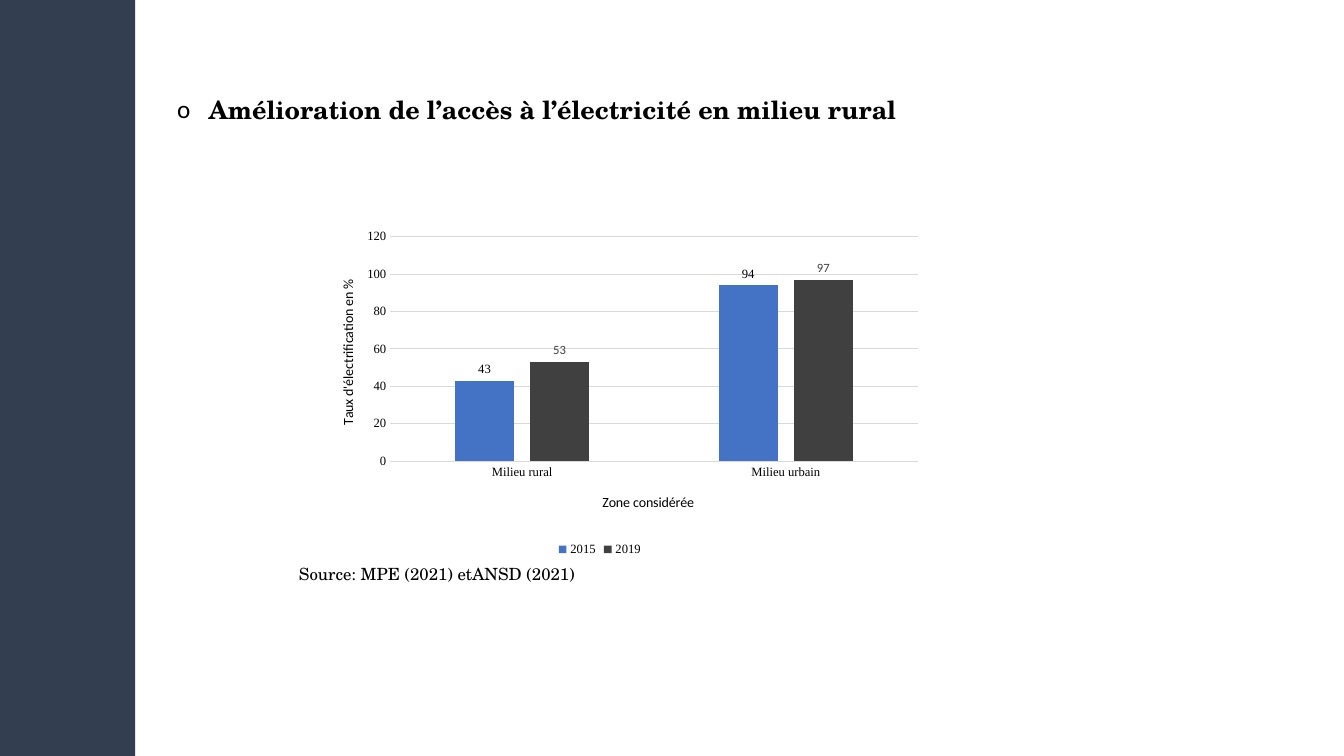
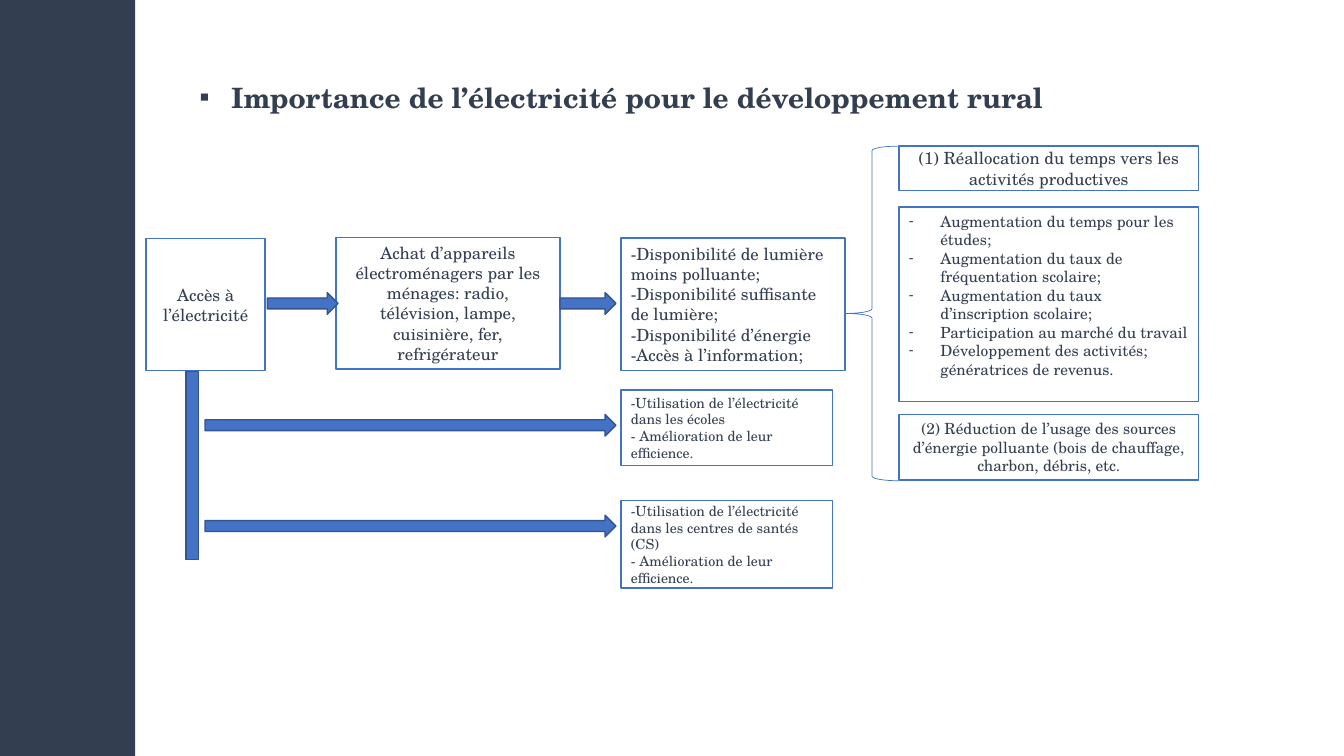
from lxml.etree import SubElement
from pptx import Presentation
from pptx.chart.data import CategoryChartData
from pptx.dml.color import RGBColor
from pptx.enum.chart import (XL_CHART_TYPE, XL_LABEL_POSITION,
                             XL_LEGEND_POSITION, XL_TICK_MARK)
from pptx.enum.shapes import MSO_SHAPE
from pptx.enum.text import MSO_ANCHOR, PP_ALIGN
from pptx.oxml.ns import qn
from pptx.util import Pt

# Shared look
NAVY = RGBColor(0x33, 0x3F, 0x50)
BLUE = RGBColor(0x44, 0x72, 0xC4)
EDGE = RGBColor(0x32, 0x54, 0x91)
DARK = RGBColor(0x40, 0x40, 0x40)
GREY = RGBColor(0xD9, 0xD9, 0xD9)
BLACK = RGBColor(0, 0, 0)
WHITE = RGBColor(255, 255, 255)
SERIF, SANS, TIMES = "TeX Gyre Schola", "Calibri", "Times New Roman"
WIDE, HIGH = 960, 540
INDENT = 22.5


def style(obj, form):
    for name, value in form.items():
        setattr(obj, name, value)


def ink(font, size, color, face=SERIF, bold=False):
    style(font, {"size": Pt(size), "name": face, "bold": bold})
    font.color.rgb = color


def stroke(line, color, width):
    line.color.rgb = color
    line.width = Pt(width)


def bullet(para, mark):
    props = para._p.get_or_add_pPr()
    props.set("marL", str(Pt(INDENT)))
    props.set("indent", str(-Pt(INDENT)))
    SubElement(props, qn("a:buFont")).set("typeface", SANS)
    SubElement(props, qn("a:buChar")).set("char", mark)


def write(frame, lines, size, color, align=PP_ALIGN.LEFT, mark=None, bold=False):
    frame.word_wrap = True
    for i, line in enumerate(lines):
        para = frame.paragraphs[0] if i == 0 else frame.add_paragraph()
        para.alignment = align
        if mark:
            bullet(para, mark)
        run = para.add_run()
        run.text = line
        ink(run.font, size, color, bold=bold)


def label(slide, spot, line, size, color, **form):
    box = slide.shapes.add_textbox(*map(Pt, spot))
    write(box.text_frame, [line], size, color, **form)


def block(slide, kind, spot, fill=None, edge=None, width=1):
    shape = slide.shapes.add_shape(kind, *map(Pt, spot))
    shape.shadow.inherit = False
    if fill is None:
        shape.fill.background()
    else:
        shape.fill.solid()
        shape.fill.fore_color.rgb = fill
    if edge is None:
        shape.line.fill.background()
    else:
        stroke(shape.line, edge, width)
    return shape


def card(slide, spot, lines, size, foot=3.6, **form):
    frame = block(slide, MSO_SHAPE.RECTANGLE, spot, WHITE, BLUE).text_frame
    style(frame, {"vertical_anchor": MSO_ANCHOR.MIDDLE, "margin_bottom": Pt(foot)})
    write(frame, lines, size, NAVY, **form)


def page(deck, title, spot, size, color, mark):
    slide = deck.slides.add_slide(deck.slide_layouts[6])
    block(slide, MSO_SHAPE.RECTANGLE, (0, 0, 96.5, HIGH), NAVY)
    label(slide, spot, title, size, color, mark=mark, bold=True)
    return slide


def place(part, index, form):
    """Give a chart part a manual layout."""
    for old in part.findall(qn("c:layout")):
        part.remove(old)
    layout = SubElement(part, qn("c:layout"))
    part.insert(index, layout)
    manual = SubElement(layout, qn("c:manualLayout"))
    for name, value in form.items():
        SubElement(manual, qn("c:" + name)).set("val", str(value))


def name_axis(axis, text, left, top, turn=0):
    title = axis.axis_title
    frame = title.text_frame
    frame.text = text
    ink(frame.paragraphs[0].runs[0].font, 10, BLACK, SANS)
    frame._txBody.bodyPr.set("rot", str(turn * 60000))
    place(title._element, 1,
          {"xMode": "edge", "yMode": "edge", "x": left, "y": top})


def bars(slide, spot, cats, rows):
    data = CategoryChartData()
    data.categories = cats
    for name, values, *_ in rows:
        data.add_series(name, values)
    chart = slide.shapes.add_chart(
        XL_CHART_TYPE.COLUMN_CLUSTERED, *map(Pt, spot), data).chart
    ink(chart.font, 10, BLACK, SANS)
    style(chart, {"has_title": False, "has_legend": True})
    style(chart.legend, {"position": XL_LEGEND_POSITION.BOTTOM,
                         "include_in_layout": False})
    ink(chart.legend.font, 9, BLACK, TIMES)

    # Columns and their values
    plot = chart.plots[0]
    style(plot, {"gap_width": 219, "overlap": -27, "vary_by_categories": False})
    for series, (_, _, color, tint, face) in zip(plot.series, rows):
        series.format.fill.solid()
        series.format.fill.fore_color.rgb = color
        tags = series.data_labels
        style(tags, {"show_value": True, "position": XL_LABEL_POSITION.OUTSIDE_END})
        ink(tags.font, 9, tint, face)

    # Axes
    across, upward = chart.category_axis, chart.value_axis
    for axis in (across, upward):
        style(axis, {"major_tick_mark": XL_TICK_MARK.NONE,
                     "minor_tick_mark": XL_TICK_MARK.NONE})
        ink(axis.tick_labels.font, 9, BLACK, TIMES)
    stroke(across.format.line, GREY, 0.75)
    style(upward, {"minimum_scale": 0, "maximum_scale": 120, "major_unit": 20})
    upward.format.line.fill.background()
    stroke(upward.major_gridlines.format.line, GREY, 0.75)
    name_axis(across, "Zone considérée", 0.5, 0.81)
    name_axis(upward, "Taux d'électrification en %", 0.11, 0.23, -90)
    place(chart._chartSpace.chart.plotArea, 0,
          {"layoutTarget": "inner", "xMode": "edge", "yMode": "edge",
           "x": 0.19, "y": 0.12, "w": 0.78, "h": 0.61})


def access(deck):
    slide = page(deck, "Amélioration de l’accès à l’électricité en milieu rural",
                 (119.5, 64, 675, 29), 18, BLACK, "o")
    bars(slide, (187, 137.5, 483, 263), ["Milieu rural", "Milieu urbain"],
         [("2015", (43, 94), BLUE, BLACK, TIMES),
          ("2019", (53, 97), DARK, DARK, SANS)])
    label(slide, (206.5, 399.5, 330, 22), "Source: MPE (2021) etANSD (2021)",
          12, BLACK)


def impact(deck):
    slide = page(deck, "Importance de l’électricité pour le développement rural",
                 (135.5, 54, 685, 32), 20, NAVY, "▪")
    mid = PP_ALIGN.CENTER
    use, last = 443.5, 642.2  # left edges of the two right-hand columns

    # Chain from access to uses
    card(slide, (104.4, 170.5, 85, 94), ["Accès à l’électricité"], 12, align=mid)
    card(slide, (240, 169.5, 160, 94),
         ["Achat d’appareils électroménagers par les ménages: radio, "
          "télévision, lampe, cuisinière, fer, refrigérateur"], 12, align=mid)
    card(slide, (use, 170, 160, 94.5),
         ["-Disponibilité de lumière moins polluante;",
          "-Disponibilité suffisante de lumière;",
          "-Disponibilité d’énergie", "-Accès à l’information;"], 12)
    for top, high, place_of in ((278.5, 54, "les écoles"),
                                (357.5, 62.5, "les centres de santés (CS)")):
        card(slide, (use, top, 151, high),
             ["-Utilisation de l’électricité dans " + place_of,
              "- Amélioration de leur efficience."], 10)

    # Effects
    card(slide, (last, 104.4, 214, 31.5),
         ["(1) Réallocation du temps vers les activités productives"],
         12, align=mid)
    card(slide, (last, 148, 214, 139),
         ["Augmentation du temps pour les études;",
          "Augmentation du taux de fréquentation scolaire;",
          "Augmentation du taux d’inscription scolaire;",
          "Participation au marché du travail",
          "Développement des activités; génératrices de revenus."],
         11, foot=17, mark="-")
    card(slide, (last, 296, 214, 47),
         ["(2) Réduction de l’usage des sources d’énergie polluante "
          "(bois de chauffage, charbon, débris, etc."], 11, align=mid)
    block(slide, MSO_SHAPE.LEFT_BRACE, (603.5, 104.4, 38.7, 239),
          edge=BLUE, width=0.5)

    # Arrows and stem
    for left, top, wide in ((191, 209, 50.5), (400, 209, 40),
                            (146.5, 296, 293.5), (146.5, 368, 293.5)):
        block(slide, MSO_SHAPE.RIGHT_ARROW, (left, top, wide, 15.5), BLUE, EDGE)
    block(slide, MSO_SHAPE.RECTANGLE, (133, 265.5, 9, 134), BLUE, EDGE)


def main():
    deck = Presentation()
    style(deck, {"slide_width": Pt(WIDE), "slide_height": Pt(HIGH)})
    access(deck)
    impact(deck)
    deck.save("out.pptx")


if __name__ == "__main__":
    main()
